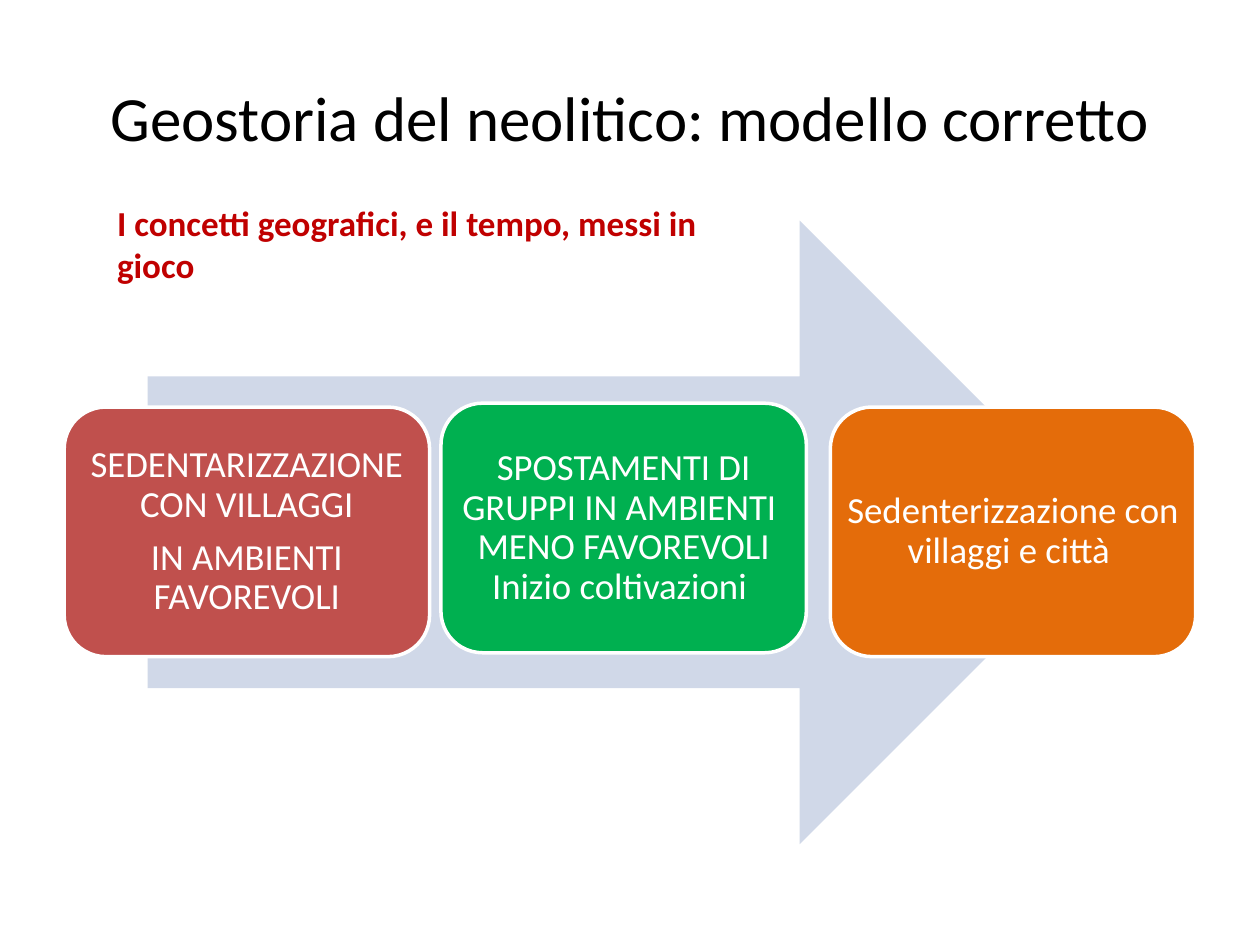
from pptx import Presentation
from pptx.dml.color import RGBColor
from pptx.enum.shapes import MSO_SHAPE
from pptx.enum.text import MSO_ANCHOR, PP_ALIGN
from pptx.util import Pt

TITLE = "Geostoria del neolitico: modello corretto"
SUBTITLE = "I concetti geografici, e il tempo, messi in gioco"
STAGES = [
    (36.7, 232.6, "C0504D", ["SEDENTARIZZAZIONE CON VILLAGGI", "IN AMBIENTI FAVOREVOLI"]),
    (252, 230.4, "00B050",
     ["SPOSTAMENTI DI GRUPPI IN AMBIENTI  MENO FAVOREVOLI Inizio coltivazioni "]),
    (474.5, 232.6, "E46C0A", ["Sedenterizzazione con villaggi e città "]),
]
STAGE_WIDTH, STAGE_HEIGHT = 208.8, 142.6


def color(value):
    return RGBColor.from_string(value)


def format_paragraph(paragraph, size, value, alignment, bold=False):
    paragraph.alignment = alignment
    font = paragraph.font
    font.name, font.size, font.bold = "Calibri", Pt(size), bold
    font.color.rgb = color(value)


def add_filled_shape(slide, kind, left, top, width, height, fill):
    shape = slide.shapes.add_shape(kind, Pt(left), Pt(top), Pt(width), Pt(height))
    shape.shadow.inherit = False
    shape.fill.solid()
    shape.fill.fore_color.rgb = color(fill)
    return shape


def add_stage(slide, left, top, fill, texts):
    stage = add_filled_shape(slide, MSO_SHAPE.ROUNDED_RECTANGLE, left, top,
                             STAGE_WIDTH, STAGE_HEIGHT, fill)
    stage.line.color.rgb = color("FFFFFF")
    stage.line.width = Pt(2)
    frame = stage.text_frame
    frame.word_wrap = True
    frame.vertical_anchor = MSO_ANCHOR.MIDDLE
    frame.margin_left = frame.margin_right = frame.margin_top = frame.margin_bottom = 0
    frame.text = "\n".join(texts)
    for paragraph in frame.paragraphs:
        format_paragraph(paragraph, 21, "FFFFFF", PP_ALIGN.CENTER)
        paragraph.line_spacing = 0.9
        paragraph.space_after = Pt(7.35)


def main():
    presentation = Presentation()
    presentation.slide_width, presentation.slide_height = Pt(720), Pt(540)
    slide = presentation.slides.add_slide(presentation.slide_layouts[5])

    title = slide.shapes.title
    title.left, title.top, title.width, title.height = Pt(36), Pt(21.6), Pt(648), Pt(90)
    title.text_frame.text = TITLE
    title.text_frame.vertical_anchor = MSO_ANCHOR.MIDDLE
    format_paragraph(title.text_frame.paragraphs[0], 36, "000000", PP_ALIGN.CENTER)

    arrow = add_filled_shape(slide, MSO_SHAPE.RIGHT_ARROW, 84.4, 126, 550.8, 356.4, "D0D8E8")
    arrow.line.fill.background()

    for stage in STAGES:
        add_stage(slide, *stage)

    subtitle = slide.shapes.add_textbox(Pt(59.8), Pt(111.6), Pt(362.9), Pt(55.4))
    subtitle.text_frame.word_wrap = True
    subtitle.text_frame.text = SUBTITLE
    format_paragraph(subtitle.text_frame.paragraphs[0], 20, "C00000", PP_ALIGN.LEFT, bold=True)

    presentation.save("out.pptx")


if __name__ == "__main__":
    main()
